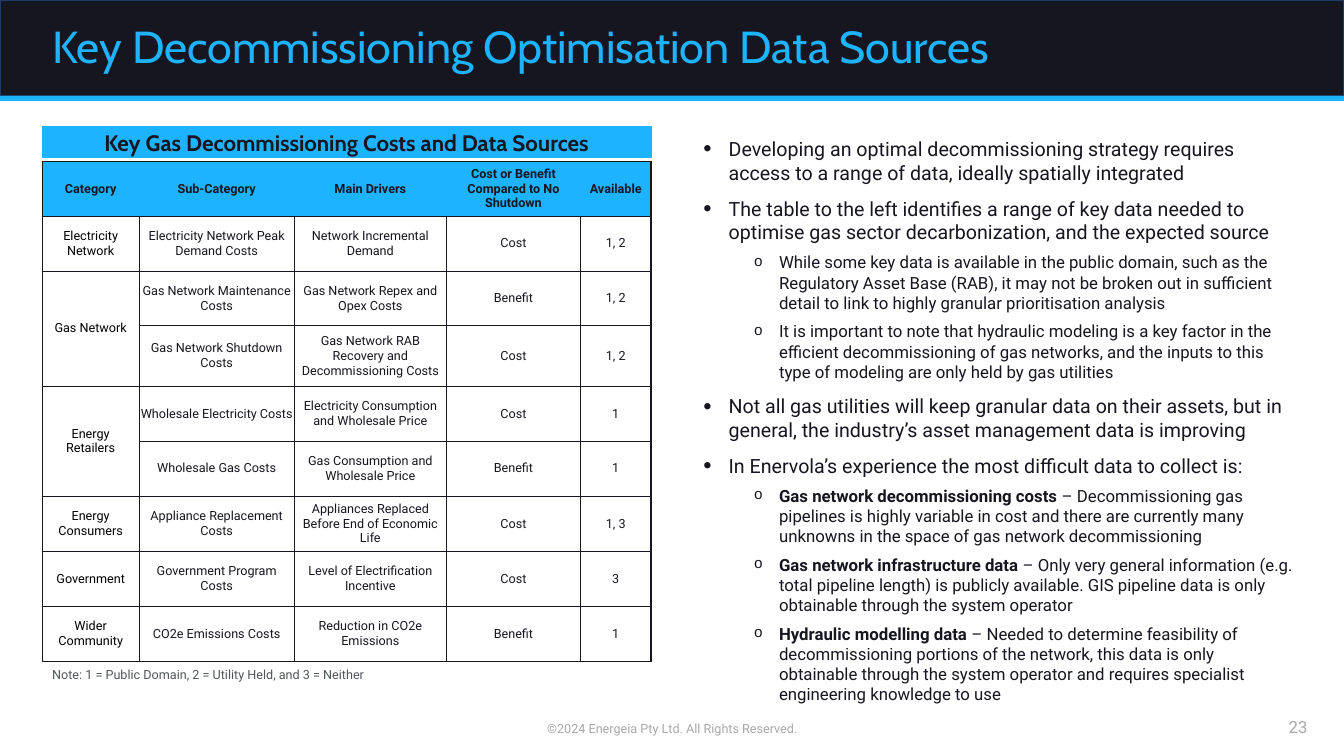
from lxml.etree import SubElement
from pptx import Presentation
from pptx.dml.color import RGBColor
from pptx.enum.shapes import MSO_SHAPE
from pptx.enum.text import MSO_ANCHOR, MSO_AUTO_SIZE, PP_ALIGN
from pptx.oxml.ns import qn
from pptx.util import Pt

INK = RGBColor(0x16, 0x16, 0x20)
SKY = RGBColor(0x1D, 0xB3, 0xFE)
NAVY = RGBColor(0x1C, 0x3C, 0x65)
GREY = RGBColor(0x51, 0x56, 0x59)
PALE = RGBColor(0xA7, 0xA8, 0xAA)
BLACK = RGBColor(0, 0, 0)

COLS = [69.1, 110.9, 108.7, 95.8, 50.4]
ROWS = [39.2, 39.2, 39.2, 43.2, 39.2, 39.2, 39.6, 39.2, 39.2]
COSTS = [
    ["Category", "Sub-Category", "Main Drivers",
     "Cost or Benefit Compared to No Shutdown", "Available"],
    ["Electricity Network", "Electricity Network Peak Demand Costs",
     "Network Incremental Demand", "Cost", "1, 2"],
    ["Gas Network", "Gas Network Maintenance Costs",
     "Gas Network Repex and Opex Costs", "Benefit", "1, 2"],
    ["", "Gas Network Shutdown Costs",
     "Gas Network RAB Recovery and Decommissioning Costs", "Cost", "1, 2"],
    ["Energy Retailers", "Wholesale Electricity Costs",
     "Electricity Consumption and Wholesale Price", "Cost", "1"],
    ["", "Wholesale Gas Costs", "Gas Consumption and Wholesale Price",
     "Benefit", "1"],
    ["Energy Consumers", "Appliance Replacement Costs",
     "Appliances Replaced Before End of Economic Life", "Cost", "1, 3"],
    ["Government", "Government Program Costs",
     "Level of Electrification Incentive", "Cost", "3"],
    ["Wider Community", "CO2e Emissions Costs", "Reduction in CO2e Emissions",
     "Benefit", "1"],
]
POINTS = [
    (0, "", "Developing an optimal decommissioning strategy requires access to a "
     "range of data, ideally spatially integrated"),
    (0, "", "The table to the left identifies a range of key data needed to optimise "
     "gas sector decarbonization, and the expected source"),
    (1, "", "While some key data is available in the public domain, such as the "
     "Regulatory Asset Base (RAB), it may not be broken out in sufficient detail "
     "to link to highly granular prioritisation analysis"),
    (1, "", "It is important to note that hydraulic modeling is a key factor in the "
     "efficient decommissioning of gas networks, and the inputs to this type of "
     "modeling are only held by gas utilities"),
    (0, "", "Not all gas utilities will keep granular data on their assets, but in "
     "general, the industry’s asset management data is improving"),
    (0, "", "In Enervola’s experience the most difficult data to collect is:"),
    (1, "Gas network decommissioning costs ", "– Decommissioning gas pipelines is "
     "highly variable in cost and there are currently many unknowns in the space "
     "of gas network decommissioning"),
    (1, "Gas network infrastructure data ", "– Only very general information (e.g. "
     "total pipeline length) is publicly available. GIS pipeline data is only "
     "obtainable through the system operator"),
    (1, "Hydraulic modelling data ", "– Needed to determine feasibility of "
     "decommissioning portions of the network, this data is only obtainable "
     "through the system operator and requires specialist engineering knowledge "
     "to use"),
]


def add_text(p, text, size=9, font="Roboto", color=INK, bold=False, align=PP_ALIGN.LEFT):
    """Add a formatted run to a paragraph."""
    p.alignment = align
    r = p.add_run()
    r.text = text
    r.font.size, r.font.name, r.font.bold = Pt(size), font, bold
    r.font.color.rgb = color


def set_frame(tf, anchor, x_inset=7.2, y_inset=7.2):
    """Set wrapping, anchor and insets of a text frame."""
    tf.word_wrap, tf.auto_size = True, MSO_AUTO_SIZE.NONE
    tf.vertical_anchor = anchor
    tf.margin_left = tf.margin_right = Pt(x_inset)
    tf.margin_top = tf.margin_bottom = Pt(y_inset)


def add_label(s, text, box, anchor=MSO_ANCHOR.MIDDLE, insets=(7.2, 7.2), **fmt):
    """Add a one-paragraph text box."""
    tf = s.shapes.add_textbox(*map(Pt, box)).text_frame
    set_frame(tf, anchor, *insets)
    add_text(tf.paragraphs[0], text, **fmt)


def add_bar(s, box, fill, line=None, weight=1):
    """Add a plain rectangle."""
    sp = s.shapes.add_shape(MSO_SHAPE.RECTANGLE, *map(Pt, box))
    sp.shadow.inherit = False
    sp.fill.solid()
    sp.fill.fore_color.rgb = fill
    if line is None:
        sp.line.fill.background()
    else:
        sp.line.color.rgb, sp.line.width = line, Pt(weight)
    return sp


def add_header(s, x, y, w, h):
    """Place the dark band, its accent rule and the title."""
    add_bar(s, (x, y, w, h), INK, NAVY)
    add_bar(s, (x, y + h, w, 3.6), SKY)
    title = s.shapes.title
    title.element.getparent().append(title.element)
    title.left, title.top = Pt(x + 30.2), Pt(y + 10.1)
    title.width, title.height = Pt(w - 56.2), Pt(50.4)
    set_frame(title.text_frame, MSO_ANCHOR.MIDDLE)
    p = title.text_frame.paragraphs[0]
    p.line_spacing = 0.9
    add_text(p, "Key Decommissioning Optimisation Data Sources",
             size=32, font="Cabin", color=SKY)


def set_borders(cell, **weights):
    """Draw cell edges L, R, T and B; a zero weight hides the edge."""
    tcPr = cell._tc.get_or_add_tcPr()
    for side, weight in weights.items():
        ln = SubElement(tcPr, qn(f"a:ln{side}"), w=str(Pt(weight)))
        if weight:
            fill = SubElement(ln, qn("a:solidFill"))
            SubElement(fill, qn("a:srgbClr"), val=str(INK))
        else:
            SubElement(ln, qn("a:noFill"))


def add_cost_table(s, x, y, w, h):
    """Place the table of costs and data sources."""
    last_row, last_col = len(ROWS) - 1, len(COLS) - 1
    tbl = s.shapes.add_table(len(ROWS), len(COLS), Pt(x), Pt(y), Pt(w), Pt(h)).table
    tbl.first_row = tbl.horz_banding = False
    for col, width in zip(tbl.columns, COLS):
        col.width = Pt(width)
    for row, height in zip(tbl.rows, ROWS):
        row.height = Pt(height)
    for i, texts in enumerate(COSTS):
        head = i == 0
        inner = 0 if head else 0.5
        for j, text in enumerate(texts):
            cell = tbl.cell(i, j)
            cell.vertical_anchor = MSO_ANCHOR.MIDDLE
            category = j == 0 and not head
            inset = Pt(3.6 if category else 0)
            cell.margin_left = cell.margin_right = inset
            cell.margin_top = cell.margin_bottom = inset
            set_borders(cell, L=1 if j == 0 else inner, R=1 if j == last_col else inner,
                        T=1 if i < 2 else 0.5, B=1 if i in (0, last_row) else 0.5)
            if head:
                cell.fill.solid()
                cell.fill.fore_color.rgb = SKY
            else:
                cell.fill.background()
            if text:
                add_text(cell.text_frame.paragraphs[0], text, bold=head,
                         color=BLACK if category else INK, align=PP_ALIGN.CENTER)
            else:
                tbl.cell(i - 1, j).merge(cell)


def add_cost_panel(s, x, y, w):
    """Place the table heading, the table and its note."""
    heading = add_bar(s, (x, y, w, 21.6), SKY, SKY, 0.75)
    set_frame(heading.text_frame, MSO_ANCHOR.MIDDLE)
    add_text(heading.text_frame.paragraphs[0], "Key Gas Decommissioning Costs and Data Sources",
             size=16, font="Cabin", bold=True, align=PP_ALIGN.CENTER)
    h = sum(ROWS)
    add_cost_table(s, x, y + 24.5, sum(COLS), h)
    add_label(s, "Note: 1 = Public Domain, 2 = Utility Held, and 3 = Neither",
              (x, y + 24.5 + h, w, 18), color=GREY)


def set_bullet(p, level):
    """Give a paragraph the bullet and indent of its level."""
    char, percent, font, left = [("•", 120, "Arial", 18), ("o", 90, "Courier New", 54)][level]
    p.level = level
    pPr = p._p.get_or_add_pPr()
    pPr.set("marL", str(Pt(left)))
    pPr.set("indent", str(Pt(-18)))
    SubElement(pPr, qn("a:buSzPct"), val=str(percent * 1000))
    SubElement(pPr, qn("a:buFont"), typeface=font)
    SubElement(pPr, qn("a:buChar"), char=char)


def add_points(s, x, y, w, h):
    """Place the two-level bullet list."""
    tf = s.shapes.add_textbox(Pt(x), Pt(y), Pt(w), Pt(h)).text_frame
    set_frame(tf, MSO_ANCHOR.TOP)
    for i, (level, lead, text) in enumerate(POINTS):
        p = tf.add_paragraph() if i else tf.paragraphs[0]
        set_bullet(p, level)
        p.space_before = Pt((3 if level else 6) if i else 0)
        p.space_after = Pt(3)
        size = 12 if level else 14
        if lead:
            add_text(p, lead, size=size, bold=True)
        add_text(p, text, size=size)


def add_footer(s, x, y, w, h):
    """Place the copyright line and the page number."""
    fmt = dict(anchor=MSO_ANCHOR.BOTTOM, insets=(0, 3.6), color=PALE)
    add_label(s, "©2024 Energeia Pty Ltd. All Rights Reserved.",
              (x + 318.2, y, 324, h), align=PP_ALIGN.CENTER, **fmt)
    add_label(s, "23", (x + w - 242, y + 0.5, 216, h), size=12, align=PP_ALIGN.RIGHT, **fmt)


def main():
    """Build and save the slide."""
    prs = Presentation()
    prs.slide_width, prs.slide_height = Pt(960), Pt(540)
    s = prs.slides.add_slide(prs.slide_layouts[5])
    add_header(s, 0, 0, 960, 68.4)
    add_cost_panel(s, 30.2, 90.7, 434.9)
    add_points(s, 495.4, 90.7, 437, 417.6)
    add_footer(s, 0, 510.5, 960, 18.7)
    prs.save("out.pptx")


if __name__ == "__main__":
    main()
